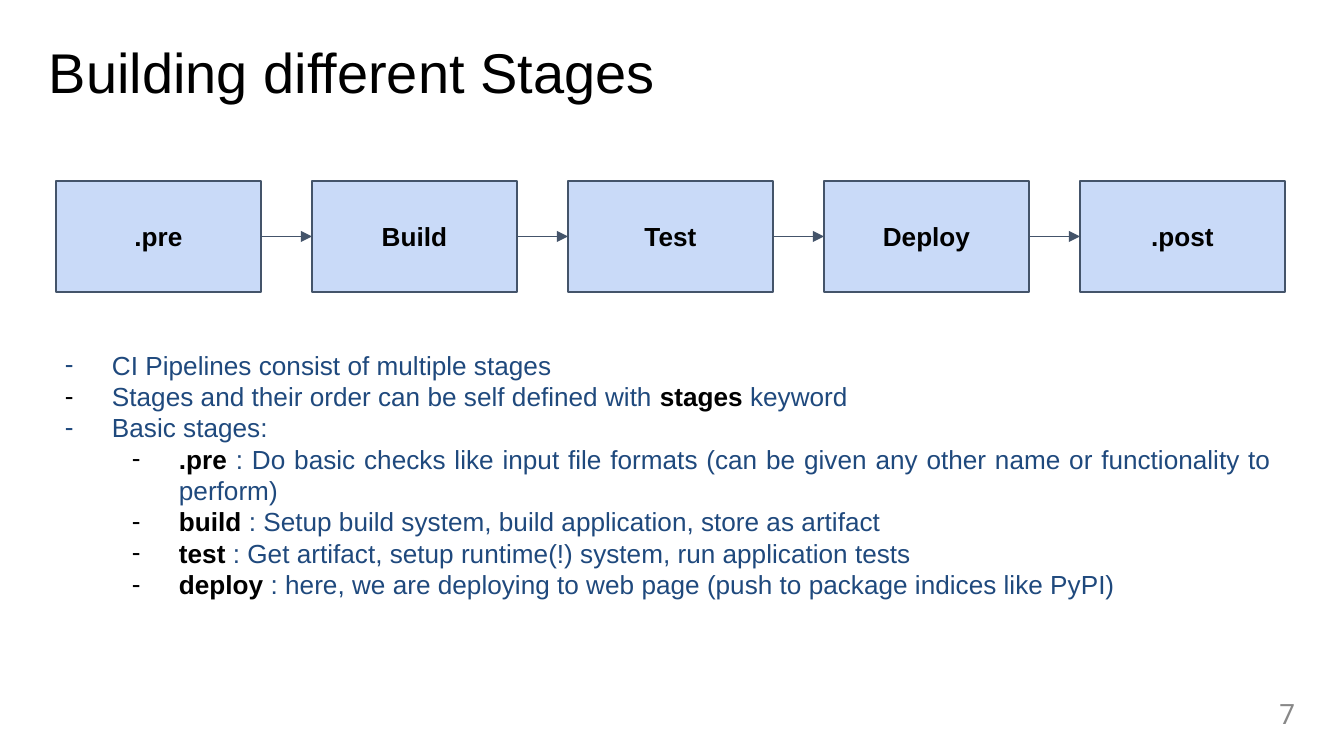
from lxml import etree
from pptx import Presentation
from pptx.dml.color import RGBColor
from pptx.enum.shapes import MSO_CONNECTOR, MSO_SHAPE
from pptx.enum.text import MSO_ANCHOR, PP_ALIGN
from pptx.oxml.ns import qn
from pptx.util import Emu, Pt

LEFT, CENTER, RIGHT, JUSTIFY = PP_ALIGN.LEFT, PP_ALIGN.CENTER, PP_ALIGN.RIGHT, PP_ALIGN.JUSTIFY
TOP, MIDDLE = MSO_ANCHOR.TOP, MSO_ANCHOR.MIDDLE
RECTANGLE, STRAIGHT = MSO_SHAPE.RECTANGLE, MSO_CONNECTOR.STRAIGHT
RIGHT_SIDE, LEFT_SIDE = 3, 1

BLACK, BLUE, GREY = "000000", "1F497D", "888888"
BOX_FILL, BOX_LINE = "C9DAF8", "44546A"

TITLE = "Building different Stages"
PAGE_NUMBER = "7"
STAGES = [".pre", "Build", "Test", "Deploy", ".post"]
# Level, bullet colour, then (text, is keyword) runs
BULLETS = [
    (0, BLUE, [("CI Pipelines consist of multiple stages", False)]),
    (0, BLACK, [("Stages and their order can be self defined with ", False),
                ("stages", True), (" keyword", False)]),
    (0, BLUE, [("Basic stages:", False)]),
    (1, BLACK, [(".pre", True), (" : Do basic checks like input file formats (can be given "
                                 "any other name or functionality to perform)", False)]),
    (1, BLACK, [("build", True),
                (" : Setup build system, build application, store as artifact", False)]),
    (1, BLACK, [("test", True),
                (" : Get artifact, setup runtime(!) system, run application tests", False)]),
    (1, BLACK, [("deploy", True),
                (" : here, we are deploying to web page (push to package indices like PyPI)",
                 False)]),
]

SLIDE_SIZE = (1344, 756)
TITLE_AREA = (39, 40, 760, 71)
PAGE_NUMBER_AREA = (1230, 691, 75, 44)
BULLET_AREA = (32, 336, 1253, 332)
BOX_LEFT, BOX_TOP, BOX_WIDTH, BOX_HEIGHT, BOX_STEP = 56, 181, 205, 111, 256
INDENT_STEP, HANGING = 67, 47


def px(value):
    return Emu(round(value * 914400 / 134.4))


def color(hex_string):
    return RGBColor.from_string(hex_string)


def set_frame(shape, anchor, margin_x, margin_y):
    frame = shape.text_frame
    values = {"word_wrap": True, "vertical_anchor": anchor,
              "margin_left": px(margin_x), "margin_right": px(margin_x),
              "margin_top": px(margin_y), "margin_bottom": px(margin_y)}
    for name, value in values.items():
        setattr(frame, name, value)
    return frame


def add_run(paragraph, text, size, hex_color, bold=False, font_name="Arial"):
    run = paragraph.add_run()
    run.text = text
    for name, value in {"size": Pt(size), "bold": bold, "name": font_name}.items():
        setattr(run.font, name, value)
    run.font.color.rgb = color(hex_color)


def add_text_box(slide, area, anchor, margin_x, margin_y):
    return set_frame(slide.shapes.add_textbox(*map(px, area)), anchor, margin_x, margin_y)


def add_dash_bullet(paragraph, level, hex_color):
    paragraph.level = level
    properties = paragraph._p.get_or_add_pPr()
    properties.set("marL", str(px(INDENT_STEP * (level + 1))))
    properties.set("indent", str(-px(HANGING)))
    bullet_color = etree.SubElement(properties, qn("a:buClr"))
    etree.SubElement(bullet_color, qn("a:srgbClr"), val=hex_color)
    etree.SubElement(properties, qn("a:buFont"), typeface="Arial")
    etree.SubElement(properties, qn("a:buChar"), char="-")


def add_stage(slide, index, name):
    box = slide.shapes.add_shape(RECTANGLE, px(BOX_LEFT + index * BOX_STEP), px(BOX_TOP),
                                 px(BOX_WIDTH), px(BOX_HEIGHT))
    box.shadow.inherit = False
    box.fill.solid()
    box.fill.fore_color.rgb = color(BOX_FILL)
    box.line.color.rgb = color(BOX_LINE)
    box.line.width = Pt(0.75)
    paragraph = set_frame(box, MIDDLE, 13, 13).paragraphs[0]
    paragraph.alignment = CENTER
    add_run(paragraph, name, 14, BLACK, bold=True)
    return box


def add_arrow(slide, source, target):
    arrow = slide.shapes.add_connector(STRAIGHT, 0, 0, 0, 0)
    arrow.begin_connect(source, RIGHT_SIDE)
    arrow.end_connect(target, LEFT_SIDE)
    arrow.line.color.rgb = color(BOX_LINE)
    arrow.line.width = Pt(0.75)
    etree.SubElement(arrow.line._get_or_add_ln(), qn("a:tailEnd"), type="triangle")
    etree.SubElement(arrow._element.spPr, qn("a:effectLst"))


def main():
    presentation = Presentation()
    presentation.slide_width, presentation.slide_height = map(px, SLIDE_SIZE)
    slide = presentation.slides.add_slide(presentation.slide_layouts[6])

    title = add_text_box(slide, TITLE_AREA, TOP, 10, 5).paragraphs[0]
    title.alignment = LEFT
    title.line_spacing = 0.9
    add_run(title, TITLE, 30, BLACK)

    boxes = [add_stage(slide, index, name) for index, name in enumerate(STAGES)]
    for source, target in zip(boxes, boxes[1:]):
        add_arrow(slide, source, target)

    frame = add_text_box(slide, BULLET_AREA, TOP, 13, 13)
    for index, (level, bullet_color, runs) in enumerate(BULLETS):
        paragraph = frame.add_paragraph() if index else frame.paragraphs[0]
        paragraph.alignment = JUSTIFY
        add_dash_bullet(paragraph, level, bullet_color)
        for text, is_keyword in runs:
            add_run(paragraph, text, 14, BLACK if is_keyword else BLUE, bold=is_keyword)

    number = add_text_box(slide, PAGE_NUMBER_AREA, MIDDLE, 10, 5).paragraphs[0]
    number.alignment = RIGHT
    add_run(number, PAGE_NUMBER, 15, GREY, font_name="Roboto")

    presentation.save("out.pptx")


if __name__ == "__main__":
    main()
